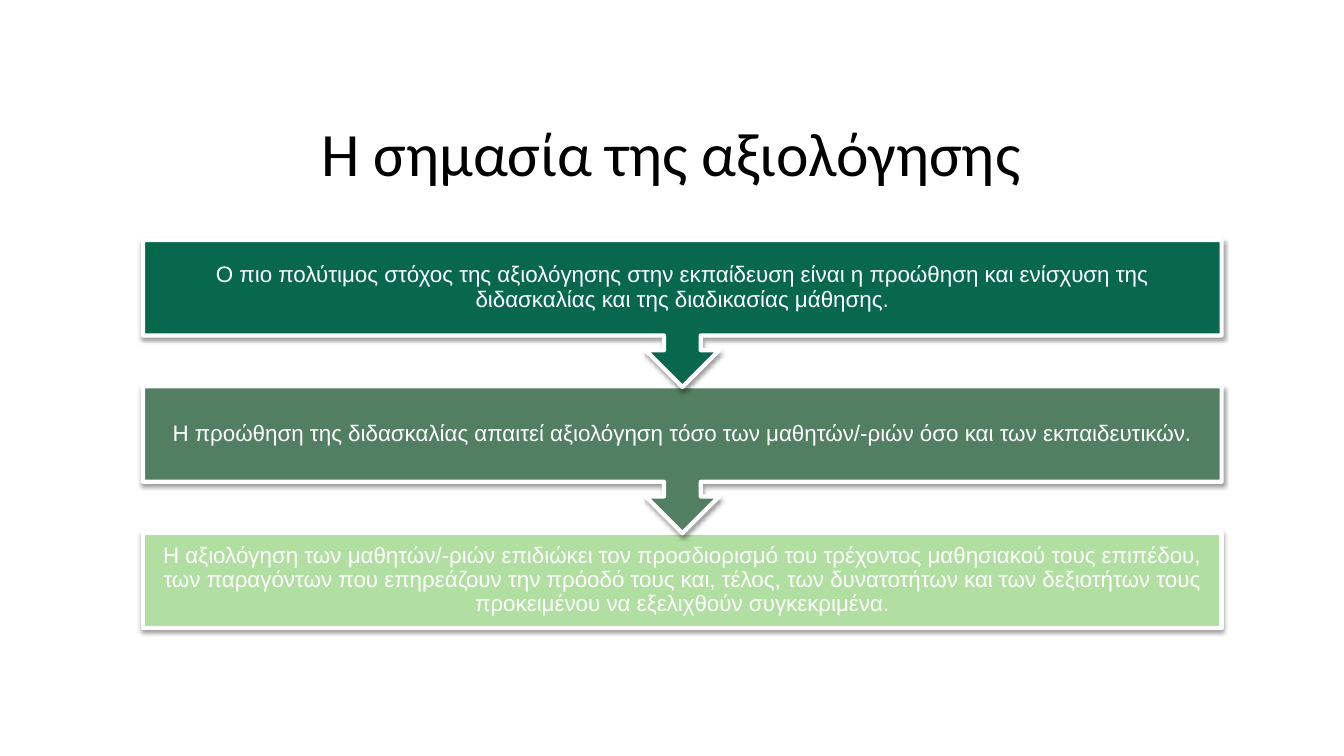
from lxml.etree import SubElement
from pptx import Presentation
from pptx.dml.color import RGBColor
from pptx.enum.shapes import MSO_SHAPE as Shape
from pptx.enum.text import MSO_ANCHOR as Anchor, PP_ALIGN as Align
from pptx.oxml.ns import qn
from pptx.util import Pt

TITLE = "Η σημασία της αξιολόγησης"
STEPS = [
    ("08684E", "Ο πιο πολύτιμος στόχος της αξιολόγησης στην εκπαίδευση είναι η "
               "προώθηση και ενίσχυση της διδασκαλίας και της διαδικασίας μάθησης."),
    ("527F62", "Η προώθηση της διδασκαλίας απαιτεί αξιολόγηση τόσο των "
               "μαθητών/-ριών όσο και των εκπαιδευτικών."),
    ("B0DFA1", "Η αξιολόγηση των μαθητών/-ριών επιδιώκει τον προσδιορισμό του "
               "τρέχοντος μαθησιακού τους επιπέδου, των παραγόντων που επηρεάζουν "
               "την πρόοδό τους και, τέλος, των δυνατοτήτων και των δεξιοτήτων τους "
               "προκειμένου να εξελιχθούν συγκεκριμένα."),
]
LEFT, TOP, WIDTH = 102.2, 171.4, 770.4
BODY_HEIGHT, CALLOUT_HEIGHT, PITCH = 68.3, 105, 104.5


def color(value):
    return RGBColor.from_string(value)


def write(frame, text, *, font, size, ink, inset_x, inset_y):
    """Fill a frame with one centred paragraph in the given format."""
    frame.word_wrap = True
    frame.vertical_anchor = Anchor.MIDDLE
    frame.margin_left = frame.margin_right = Pt(inset_x)
    frame.margin_top = frame.margin_bottom = Pt(inset_y)
    para = frame.paragraphs[0]
    para.alignment = Align.CENTER
    para.line_spacing = 0.9
    span = para.add_run()
    span.text = text
    span.font.name = font
    span.font.size = Pt(size)
    span.font.color.rgb = color(ink)


class StepSlide:
    heading = dict(font="Calibri", size=44, ink="000000", inset_x=7.2, inset_y=3.6)
    body = dict(font="Arial", size=16, ink="FFFFFF", inset_x=8.96, inset_y=8.96)
    outline = "FFFFFF"

    def __init__(self, deck):
        self.page = deck.slides.add_slide(deck.slide_layouts[5])

    def title(self, text, left, top, width, height):
        box = self.page.shapes.title
        box.left, box.top, box.width, box.height = map(Pt, (left, top, width, height))
        write(box.text_frame, text, **self.heading)

    def panel(self, kind, fill, left, top, width, height, rotation=0):
        panel = self.page.shapes.add_shape(kind, *map(Pt, (left, top, width, height)))
        panel.rotation = rotation
        panel.fill.solid()
        panel.fill.fore_color.rgb = color(fill)
        panel.line.color.rgb = color(self.outline)
        panel.line.width = Pt(3)
        self.drop_shadow(panel)

    def drop_shadow(self, panel):
        panel.shadow.inherit = False
        effects = panel._element.spPr.find(qn("a:effectLst"))
        shadow = SubElement(effects, qn("a:outerShdw"), blurRad=str(Pt(3.1)),
                            dist=str(Pt(1.6)), dir="5400000", rotWithShape="0")
        tint = SubElement(shadow, qn("a:srgbClr"), val="000000")
        SubElement(tint, qn("a:alpha"), val="38000")

    def label(self, text, left, top, width, height):
        box = self.page.shapes.add_textbox(*map(Pt, (left, top, width, height)))
        write(box.text_frame, text, **self.body)


def main():
    deck = Presentation()
    deck.slide_width, deck.slide_height = Pt(960), Pt(540)
    slide = StepSlide(deck)
    slide.title(TITLE, 65.5, 65.5, 828, 92.9)

    # Bottom step first, so that each arrow lies over the step below it
    last = len(STEPS) - 1
    for index, (fill, text) in reversed(list(enumerate(STEPS))):
        top = TOP + index * PITCH
        if index == last:
            slide.panel(Shape.RECTANGLE, fill, LEFT, top, WIDTH, BODY_HEIGHT)
        else:
            slide.panel(Shape.UP_ARROW_CALLOUT, fill, LEFT, top, WIDTH,
                        CALLOUT_HEIGHT, rotation=180)
        slide.label(text, LEFT, top, WIDTH, BODY_HEIGHT)

    deck.save("out.pptx")


if __name__ == "__main__":
    main()
